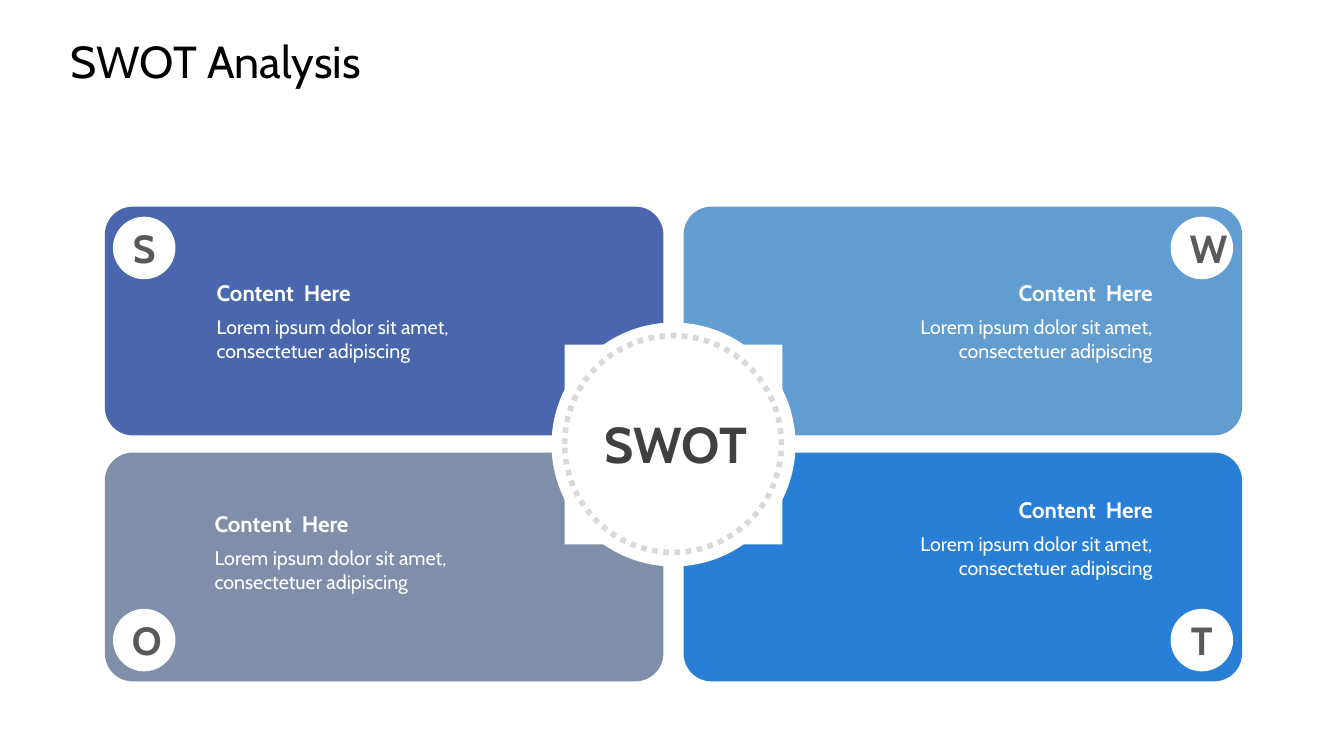
from pptx import Presentation
from pptx.dml.color import RGBColor
from pptx.enum.dml import MSO_LINE
from pptx.enum.shapes import MSO_SHAPE
from pptx.enum.text import MSO_ANCHOR, PP_ALIGN
from pptx.util import Inches, Pt

WHITE = RGBColor(0xFF, 0xFF, 0xFF)
BLACK = RGBColor(0x00, 0x00, 0x00)
INDIGO = RGBColor(0x4A, 0x66, 0xAC)
SKY = RGBColor(0x62, 0x9D, 0xD1)
SLATE = RGBColor(0x7F, 0x8F, 0xA9)
BLUE = RGBColor(0x29, 0x7F, 0xD5)
LETTER_GRAY = RGBColor(0x59, 0x59, 0x59)
CENTER_GRAY = RGBColor(0x40, 0x40, 0x40)
RING_GRAY = RGBColor(0xD9, 0xD9, 0xD9)

PANEL_WIDTH, PANEL_HEIGHT = 5.54, 2.27
BADGE_SIZE = 0.62
CAPTION_WIDTH = 3.55
HEADING = "Content  Here"
BODY = "Lorem ipsum dolor sit amet, consectetuer adipiscing"

# letter, colour, panel position, badge position, caption position, alignment
QUADRANTS = [
    ("S", INDIGO, (1.04, 2.05), (1.12, 2.15), (2.05, 2.72), PP_ALIGN.LEFT),
    ("W", SKY, (6.78, 2.05), (11.61, 2.15), (7.98, 2.72), PP_ALIGN.RIGHT),
    ("O", SLATE, (1.04, 4.49), (1.12, 6.04), (2.03, 5.01), PP_ALIGN.LEFT),
    ("T", BLUE, (6.78, 4.49), (11.61, 6.04), (7.98, 4.87), PP_ALIGN.RIGHT),
]


class SwotSlide:
    font_name = "Cabin"

    def __init__(self, slide):
        self.slide = slide

    def fill_text(self, shape, text, size, color, bold=False, align=PP_ALIGN.LEFT):
        """Put one styled paragraph into a shape."""
        shape.text_frame.text = text
        paragraph = shape.text_frame.paragraphs[0]
        paragraph.alignment = align
        font = paragraph.runs[0].font
        font.name = self.font_name
        font.size = Pt(size)
        font.bold = bold
        font.color.rgb = color

    def text(self, left, top, width, height, text, size, color, **style):
        box = self.slide.shapes.add_textbox(
            Inches(left), Inches(top), Inches(width), Inches(height))
        box.text_frame.word_wrap = True
        self.fill_text(box, text, size, color, **style)
        return box

    def shape(self, kind, left, top, width, height, fill=None):
        shape = self.slide.shapes.add_shape(
            kind, Inches(left), Inches(top), Inches(width), Inches(height))
        shape.shadow.inherit = False
        shape.line.fill.background()
        if fill is None:
            shape.fill.background()
        else:
            shape.fill.solid()
            shape.fill.fore_color.rgb = fill
        return shape

    def title(self, text):
        box = self.text(0.6, 0.24, 12.41, 0.79, text, 32, BLACK)
        box.text_frame.vertical_anchor = MSO_ANCHOR.MIDDLE
        paragraph = box.text_frame.paragraphs[0]
        paragraph.line_spacing = 0.9
        paragraph.space_before = Pt(10)

    def panel(self, left, top, color):
        panel = self.shape(MSO_SHAPE.ROUNDED_RECTANGLE, left, top,
                           PANEL_WIDTH, PANEL_HEIGHT, color)
        panel.adjustments[0] = 0.123

    def hub(self, text):
        self.shape(MSO_SHAPE.RECTANGLE, 5.6, 3.42, 2.16, 1.98, WHITE)
        self.shape(MSO_SHAPE.OVAL, 5.47, 3.2, 2.42, 2.42, WHITE)
        ring = self.shape(MSO_SHAPE.OVAL, 5.6, 3.33, 2.15, 2.15)
        ring.line.color.rgb = RING_GRAY
        ring.line.width = Pt(4)
        ring.line.dash_style = MSO_LINE.ROUND_DOT
        self.text(5.76, 4.05, 1.89, 0.71, text, 36, CENTER_GRAY,
                  bold=True, align=PP_ALIGN.CENTER)

    def badge(self, left, top, letter):
        badge = self.shape(MSO_SHAPE.OVAL, left, top, BADGE_SIZE, BADGE_SIZE, WHITE)
        badge.text_frame.vertical_anchor = MSO_ANCHOR.MIDDLE
        self.fill_text(badge, letter, 28, LETTER_GRAY, bold=True,
                       align=PP_ALIGN.CENTER)

    def caption(self, left, top, align):
        self.text(left, top, CAPTION_WIDTH, 0.37, HEADING, 16, WHITE,
                  bold=True, align=align)
        self.text(left, top + 0.36, CAPTION_WIDTH, 0.57, BODY, 14, WHITE, align=align)


def main():
    presentation = Presentation()
    presentation.slide_width = Inches(13.33)
    presentation.slide_height = Inches(7.5)
    swot = SwotSlide(presentation.slides.add_slide(presentation.slide_layouts[6]))

    swot.title("SWOT Analysis")
    for _, color, panel_position, *_ in QUADRANTS:
        swot.panel(*panel_position, color)
    swot.hub("SWOT")
    for letter, _, _, badge_position, caption_position, align in QUADRANTS:
        swot.badge(*badge_position, letter)
        swot.caption(*caption_position, align)

    presentation.save("out.pptx")


if __name__ == "__main__":
    main()
